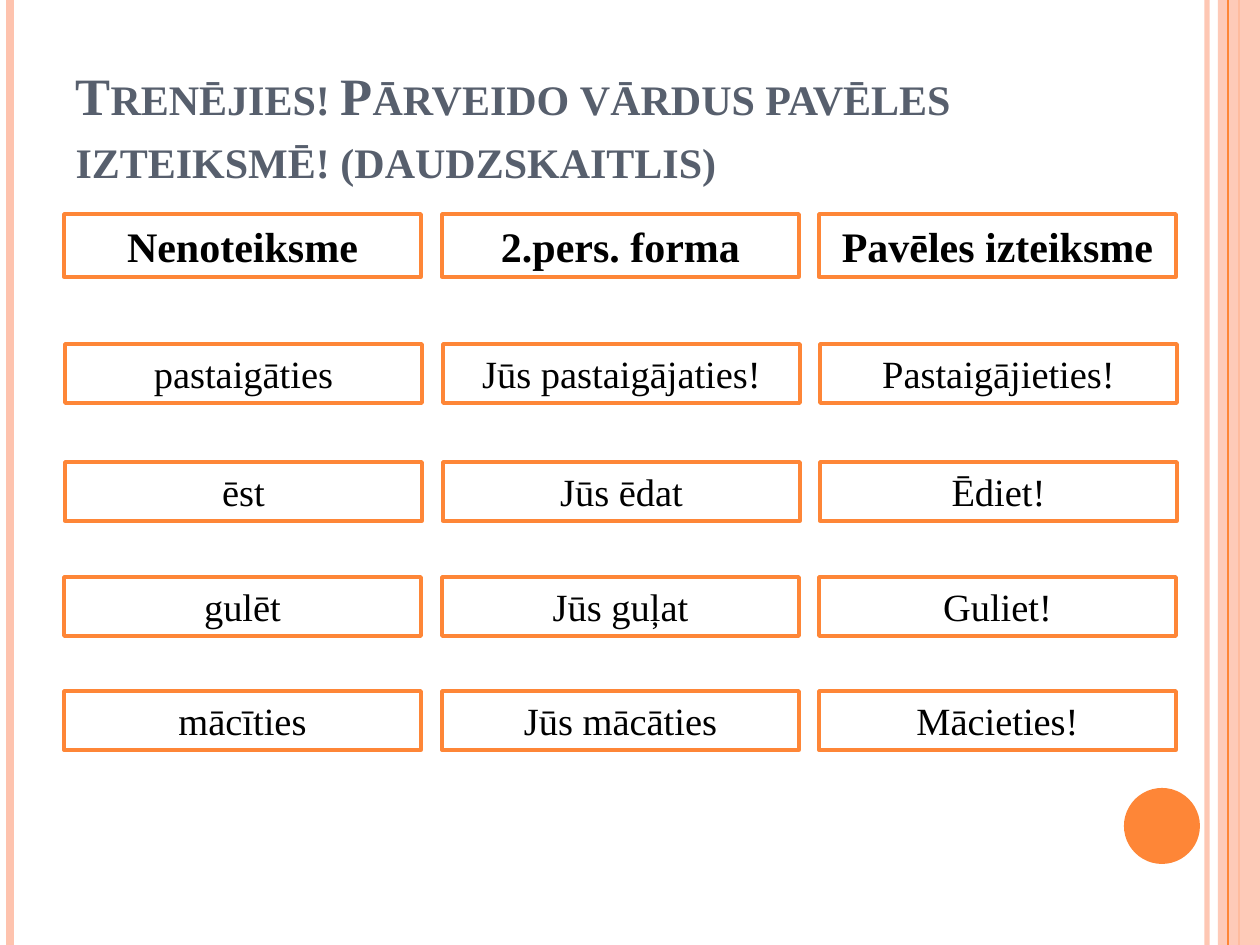
from dataclasses import dataclass

from lxml.etree import SubElement
from pptx import Presentation
from pptx.dml.color import RGBColor
from pptx.enum.shapes import MSO_CONNECTOR, MSO_SHAPE
from pptx.enum.text import MSO_ANCHOR, MSO_AUTO_SIZE, PP_ALIGN
from pptx.oxml.ns import qn
from pptx.util import Emu, Pt

EMU_PER_PX = 914400 / 126
FONT = "Times New Roman"
ORANGE = "FE8637"
PEACH = "FEC3AE"
COLUMNS = (64, 442, 819)
BOX_W = 357


@dataclass
class Stripe:
    x: int
    color: str
    width: float
    alpha: int = 100


@dataclass
class Row:
    y: int
    words: tuple[str, str, str]
    shift: int = 0
    h: int = 59
    size: int = 22
    bold: bool = False


STRIPES = (
    Stripe(1207, PEACH, 3, 93),
    Stripe(10, PEACH, 4.5),
    Stripe(1239, ORANGE, 1.5),
    Stripe(1228, ORANGE, 0.75),
)

ROWS = (
    Row(214, ("Nenoteiksme", "2.pers. forma", "Pavēles izteiksme"), h=63, size=24, bold=True),
    Row(344, ("pastaigāties", "Jūs pastaigājaties!", "Pastaigājieties!"), shift=1),
    Row(462, ("ēst", "Jūs ēdat", "Ēdiet!"), shift=1),
    Row(577, ("gulēt", "Jūs guļat", "Guliet!")),
    Row(691, ("mācīties", "Jūs mācāties", "Mācieties!")),
)


def px(n: int) -> Emu:
    return Emu(round(n * EMU_PER_PX))


def rgb(color: str) -> RGBColor:
    return RGBColor.from_string(color)


def set_alpha(sp, percent: int) -> None:
    for clr in sp._element.spPr.iter(qn("a:srgbClr")):
        SubElement(clr, qn("a:alpha")).set("val", str(percent * 1000))


def add_run(p, text: str, size: int, color: str, bold: bool):
    r = p.add_run()
    r.text = text
    r.font.name = FONT
    r.font.size = Pt(size)
    r.font.bold = bold
    r.font.color.rgb = rgb(color)
    return r


def add_stripe(s, stripe: Stripe) -> None:
    x = px(stripe.x)
    sp = s.shapes.add_connector(MSO_CONNECTOR.STRAIGHT, x, 0, x, px(945))
    sp.line.color.rgb = rgb(stripe.color)
    sp.line.width = Pt(stripe.width)
    SubElement(sp._element.spPr, qn("a:effectLst"))
    if stripe.alpha < 100:
        set_alpha(sp, stripe.alpha)


def add_shape(s, kind: MSO_SHAPE, x: int, y: int, w: int, h: int, fill: str):
    sp = s.shapes.add_shape(kind, px(x), px(y), px(w), px(h))
    sp.shadow.inherit = False
    sp.fill.solid()
    sp.fill.fore_color.rgb = rgb(fill)
    sp.line.fill.background()
    return sp


def add_row(s, row: Row) -> None:
    for x, word in zip(COLUMNS, row.words):
        sp = add_shape(s, MSO_SHAPE.RECTANGLE, x + row.shift, row.y, BOX_W, row.h, "FFFFFF")
        sp.line.color.rgb = rgb(ORANGE)
        sp.line.width = Pt(2)
        tf = sp.text_frame
        tf.word_wrap = True
        tf.auto_size = MSO_AUTO_SIZE.SHAPE_TO_FIT_TEXT
        tf.vertical_anchor = MSO_ANCHOR.TOP
        p = tf.paragraphs[0]
        p.alignment = PP_ALIGN.CENTER
        add_run(p, word, row.size, "000000", row.bold)


def set_title(s, text: str) -> None:
    sp = s.shapes.title
    sp.left, sp.top, sp.width, sp.height = px(63), px(38), px(1029), px(157)
    tf = sp.text_frame
    tf.word_wrap = True
    tf.auto_size = MSO_AUTO_SIZE.NONE
    tf.vertical_anchor = MSO_ANCHOR.BOTTOM
    p = tf.paragraphs[0]
    p.alignment = PP_ALIGN.LEFT
    r = add_run(p, text, 30, "575F6D", True)
    r._r.get_or_add_rPr().set("cap", "small")


def main() -> None:
    prs = Presentation()
    prs.slide_width, prs.slide_height = px(1260), px(945)
    s = prs.slides.add_slide(prs.slide_layouts[5])
    for stripe in STRIPES[:3]:
        add_stripe(s, stripe)
    band = add_shape(s, MSO_SHAPE.RECTANGLE, 1218, 0, 42, 945, PEACH)
    set_alpha(band, 87)
    add_stripe(s, STRIPES[3])
    add_shape(s, MSO_SHAPE.OVAL, 1124, 788, 76, 76, ORANGE)
    set_title(s, "Trenējies! Pārveido vārdus pavēles izteiksmē! (daudzskaitlis)")
    for row in ROWS:
        add_row(s, row)
    prs.save("out.pptx")


if __name__ == "__main__":
    main()
